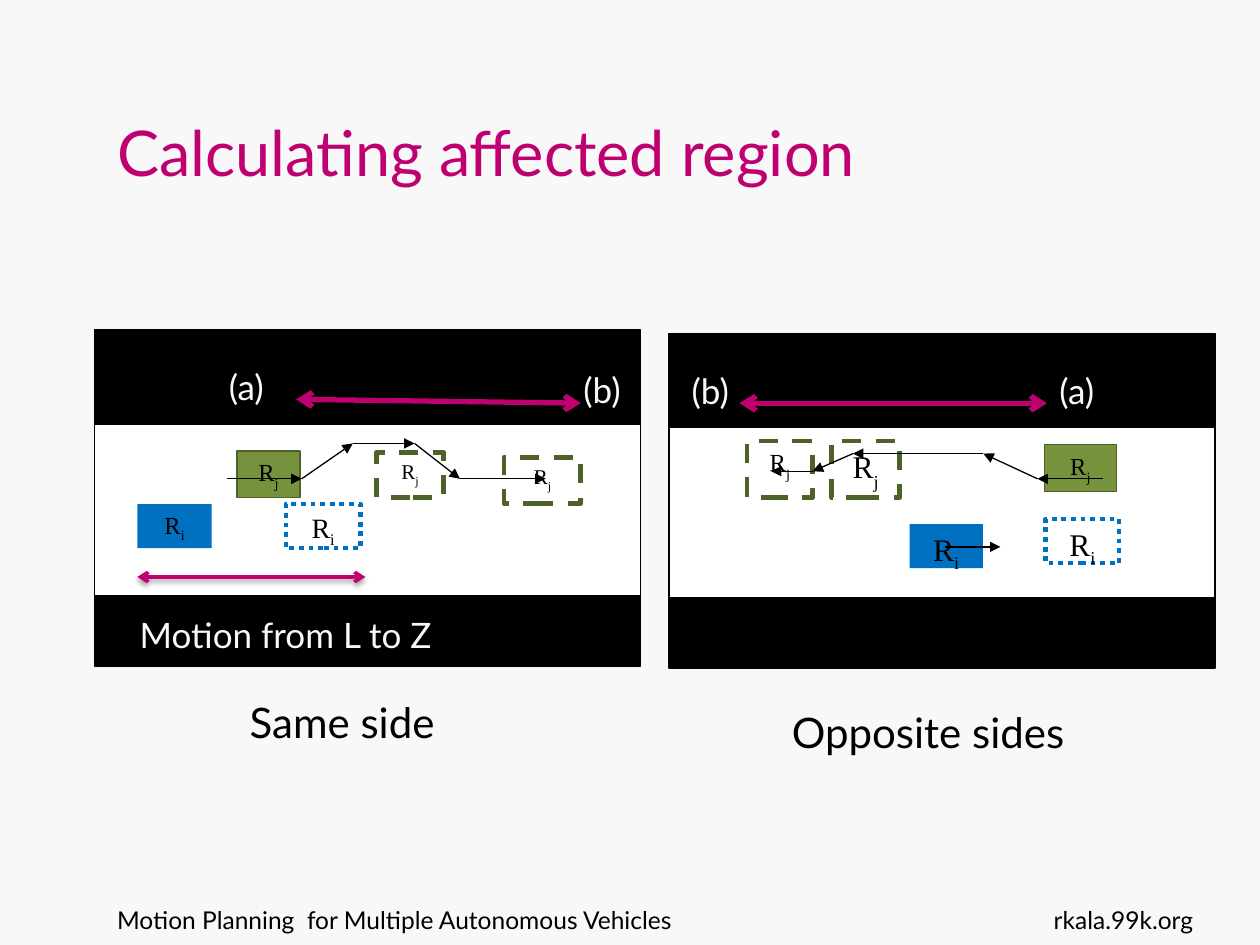
import itertools

import pptx
import pptx.dml.color
import pptx.enum.dml
import pptx.enum.shapes
import pptx.enum.text
import pptx.oxml
import pptx.oxml.ns
import pptx.util

Pt = pptx.util.Pt
ALIGN = pptx.enum.text.PP_ALIGN
ANCHOR = pptx.enum.text.MSO_ANCHOR
DASH = pptx.enum.dml.MSO_LINE

BLACK, WHITE, PALE = "000000", "FFFFFF", "F8F8F8"
MAGENTA, BLUE, GREEN, DARK_GREEN = "BF0071", "0070C0", "76923C", "4E6128"
SANS, SERIF = "Lato", "Times New Roman"

VEHICLE_STYLES = {
    "blue": ("i", BLUE, None, 0, None),
    "dotted": ("i", None, BLUE, 2.75, DASH.ROUND_DOT),
    "green": ("j", GREEN, DARK_GREEN, 0.75, None),
    "dashed": ("j", None, DARK_GREEN, 2.75, DASH.DASH),
}


def color(value):
    return pptx.dml.color.RGBColor.from_string(value)


def set_font(paragraph, name, size, text_color):
    paragraph.font.name = name
    paragraph.font.size = Pt(size)
    paragraph.font.color.rgb = color(text_color)


def add_text(slide, box, text, size, text_color=BLACK, align=ALIGN.LEFT, anchor=ANCHOR.TOP):
    shape = slide.shapes.add_textbox(*map(Pt, box))
    frame = shape.text_frame
    frame.word_wrap = True
    frame.vertical_anchor = anchor
    paragraph = frame.paragraphs[0]
    paragraph.text = text
    paragraph.alignment = align
    set_font(paragraph, SANS, size, text_color)


def add_rectangle(slide, box, fill, line, width=0.75, dash=None):
    shape = slide.shapes.add_shape(pptx.enum.shapes.MSO_SHAPE.RECTANGLE, *map(Pt, box))
    shape.shadow.inherit = False
    if fill:
        shape.fill.solid()
        shape.fill.fore_color.rgb = color(fill)
    else:
        shape.fill.background()
    if line:
        shape.line.color.rgb = color(line)
        shape.line.width = Pt(width)
        if dash:
            shape.line.dash_style = dash
    else:
        shape.line.fill.background()
    return shape


def add_vehicle(slide, box, style, size):
    subscript, fill, line, width, dash = VEHICLE_STYLES[style]
    shape = add_rectangle(slide, box, fill, line, width, dash)
    frame = shape.text_frame
    frame.vertical_anchor = ANCHOR.TOP
    paragraph = frame.paragraphs[0]
    paragraph.alignment = ALIGN.CENTER
    paragraph.add_run().text = "R"
    index = paragraph.add_run()
    index.text = subscript
    baseline = "-25000" if subscript == "i" else "-30000"
    index._r.get_or_add_rPr().set("baseline", baseline)
    set_font(paragraph, SERIF, size, BLACK)


def add_arrow(slide, start, end, line=BLACK, width=0.75, heads=(("tailEnd", "triangle"),), shadow=""):
    connector = slide.shapes.add_connector(
        pptx.enum.shapes.MSO_CONNECTOR.STRAIGHT, *map(Pt, (*start, *end)))
    connector.line.color.rgb = color(line)
    connector.line.width = Pt(width)
    namespace = pptx.oxml.ns.nsdecls("a")
    outline = connector.line._get_or_add_ln()
    for tag, kind in heads:
        outline.append(pptx.oxml.parse_xml(f'<a:{tag} {namespace} type="{kind}"/>'))
    connector._element.spPr.append(
        pptx.oxml.parse_xml(f"<a:effectLst {namespace}>{shadow}</a:effectLst>"))


def add_range(slide, start, end, width, distance, opacity):
    shadow = (
        f'<a:outerShdw blurRad="{Pt(3.1)}" dist="{Pt(distance)}" dir="5400000" rotWithShape="0">'
        f'<a:srgbClr val="{BLACK}"><a:alpha val="{opacity * 1000}"/></a:srgbClr></a:outerShdw>')
    heads = (("headEnd", "arrow"), ("tailEnd", "arrow"))
    add_arrow(slide, start, end, MAGENTA, width, heads, shadow)


def add_road_panel(slide, box, road, vehicles, route, span, labels, caption, motion=None, lag=None):
    left, top, width, height = box

    def place(x, y, *extent):
        return (left + x, top + y, *extent)

    add_rectangle(slide, box, BLACK, BLACK)
    road_top, road_height = road
    add_rectangle(slide, place(0, road_top, width, road_height), WHITE, BLACK)
    for vehicle_box, style, size in vehicles:
        add_vehicle(slide, place(*vehicle_box), style, size)
    for start, end in itertools.pairwise(route):
        add_arrow(slide, place(*start), place(*end))
    if motion:
        add_arrow(slide, *(place(*point) for point in motion))
    if lag:
        add_range(slide, *(place(*point) for point in lag), 2, 1.6, 38)
    add_range(slide, *(place(*point) for point in span), 3, 1.8, 35)
    for text, x, y, label_width in labels:
        add_text(slide, place(x, y, label_width, 31.7), text, 20, PALE)
    text, x, y = caption
    add_text(slide, place(x, y, 226.8, 36), text, 24, align=ALIGN.CENTER)


def add_title(slide, box):
    add_text(slide, box, "Calculating affected region", 36, MAGENTA, anchor=ANCHOR.BOTTOM)


def add_footer(slide, box):
    left, top, width, height = box
    site_width = 108
    add_text(slide, (left, top, 499, height), "Motion Planning  for Multiple Autonomous Vehicles", 14)
    add_text(slide, (left + width - site_width, top, site_width, height),
             "rkala.99k.org", 14, align=ALIGN.RIGHT)


def main():
    presentation = pptx.Presentation()
    presentation.slide_width = Pt(720)
    presentation.slide_height = Pt(540)
    slide = presentation.slides.add_slide(presentation.slide_layouts[6])
    slide.background.fill.solid()
    slide.background.fill.fore_color.rgb = color(PALE)

    add_footer(slide, (59.8, 513.4, 629.2, 37.4))
    add_title(slide, (59.8, 21.6, 487.4, 90))
    add_road_panel(
        slide, (54, 188.6, 312, 192), road=(54, 98),
        vehicles=[
            ((24.5, 99.4, 42.5, 25.2), "blue", 14),
            ((109.4, 99.4, 42.5, 25.2), "dotted", 16),
            ((81.4, 69.1, 36, 26.6), "green", 14),
            ((161.3, 69.8, 38.2, 25.9), "dashed", 12),
            ((234, 72.7, 43.9, 26.6), "dashed", 12),
        ],
        route=[(75.6, 85), (118.4, 85), (147.6, 64.8), (182.9, 64.8), (208.8, 85), (257.8, 85)],
        span=[(115.2, 39.6), (277.9, 41.8)],
        labels=[("Motion from L to Z", 18.7, 158.4, 209.5),
                ("(a)", 69.8, 16.6, 45.4), ("(b)", 272.2, 18.7, 56.9)],
        caption=("Same side", 28.1, 205.9),
        lag=[(24.5, 141.1), (154.8, 141.1)])
    add_road_panel(
        slide, (382.3, 190.8, 312, 191), road=(53.3, 97.2),
        vehicles=[
            ((137.5, 108.7, 41.8, 25.2), "blue", 18),
            ((92.9, 61.2, 38.9, 32.4), "dashed", 18),
            ((214.6, 63.4, 41, 26.6), "green", 14),
            ((215.3, 105.8, 41.8, 25.2), "dotted", 18),
            ((44.6, 61.2, 37.4, 32.4), "dashed", 14),
        ],
        route=[(247.7, 82.8), (210.6, 82.8), (179.6, 68.4), (105.1, 68.4), (82.1, 78.5), (58.3, 78.5)],
        span=[(40.3, 39.6), (216, 39.6)],
        labels=[("(b)", 5.8, 16.6, 56.9), ("(a)", 216, 16.6, 45.4)],
        caption=("Opposite sides", 34.6, 209.5),
        motion=[(157.7, 121.7), (189.4, 121.7)])
    presentation.save("out.pptx")


if __name__ == "__main__":
    main()
